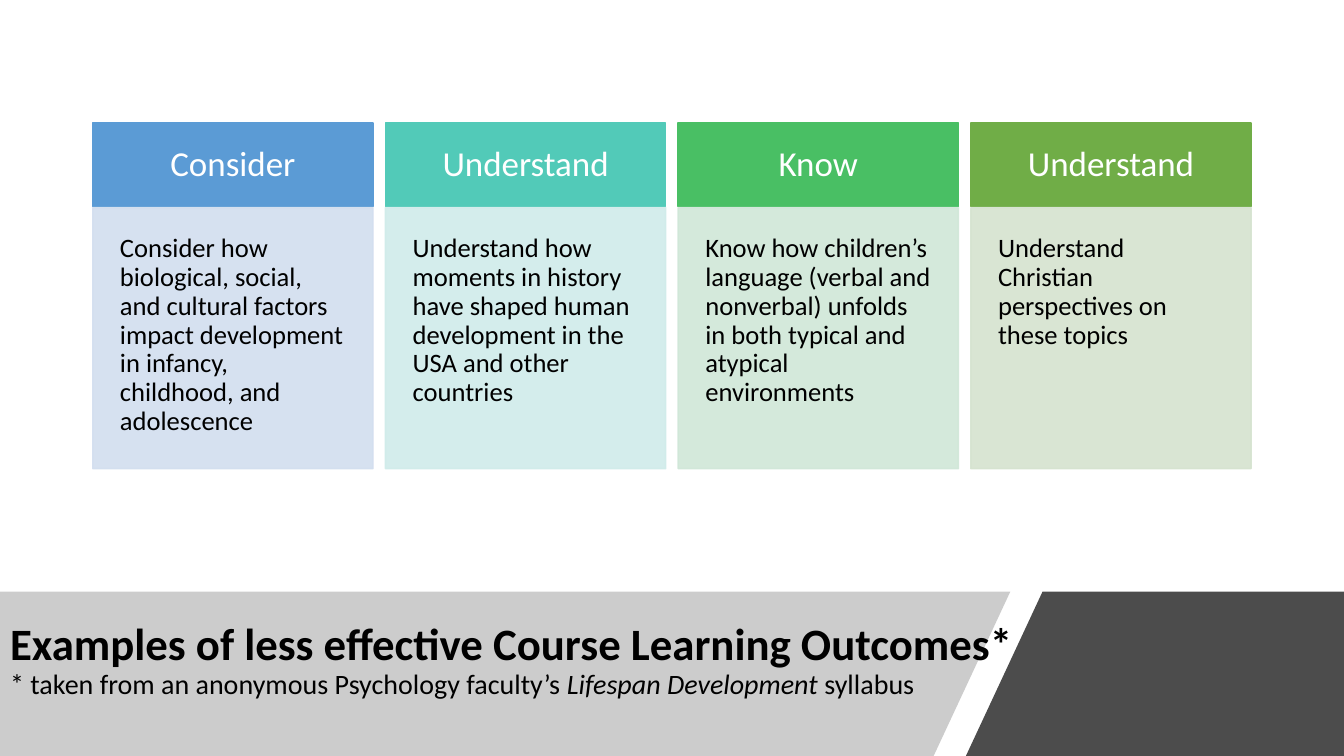
from dataclasses import dataclass

from pptx import Presentation
from pptx.dml.color import RGBColor
from pptx.enum.shapes import MSO_SHAPE as Shape
from pptx.enum.text import MSO_ANCHOR as Anchor, MSO_AUTO_SIZE as AutoSize, PP_ALIGN as Align
from pptx.oxml.ns import qn
from pptx.oxml.xmlchemy import OxmlElement
from pptx.util import Inches, Pt

FONT = "Calibri"
COLORS = {"black": "000000", "white": "FFFFFF", "gray": "808080"}
SLIDE_WIDTH, SLIDE_HEIGHT = 13.33, 7.5
BAND_TOP = 5.87
COLUMN_LEFT, COLUMN_STEP, COLUMN_WIDTH = 0.92, 2.903, 2.78


@dataclass(frozen=True)
class Outcome:
    verb: str
    statement: str
    header_fill: str
    body_fill: str


@dataclass(frozen=True)
class BoxStyle:
    top: float
    height: float
    inset: float
    size: int
    color: str
    align: Align
    anchor: Anchor
    opacity: int


@dataclass(frozen=True)
class Band:
    points: tuple[tuple[float, float], ...]
    color: str
    opacity: int


@dataclass(frozen=True)
class TitleRun:
    text: str
    size: int = 20
    bold: bool = False
    italic: bool = False


HEADER = BoxStyle(1.22, 0.83, 0.22, 25, COLORS["white"], Align.CENTER, Anchor.MIDDLE, 100)
BODY = BoxStyle(2.06, 2.59, 0.27, 19, COLORS["black"], Align.LEFT, Anchor.TOP, 90)

OUTCOMES = (
    Outcome("Consider",
            "Consider how biological, social, and cultural factors impact development "
            "in infancy, childhood, and adolescence", "5B9BD5", "D2DEEF"),
    Outcome("Understand",
            "Understand how moments in history have shaped human development in the USA "
            "and other countries", "52CAB8", "D0ECEA"),
    Outcome("Know",
            "Know how children’s language (verbal and nonverbal) unfolds in both typical "
            "and atypical environments", "49BF64", "D0E7D8"),
    Outcome("Understand",
            "Understand Christian perspectives on these topics", "70AD47", "D5E3CF"),
)

TITLE_BAND = Band(((0, BAND_TOP), (10.02, BAND_TOP), (9.26, SLIDE_HEIGHT), (0, SLIDE_HEIGHT)),
                  COLORS["gray"], 40)
DARK_BAND = Band(((10.34, BAND_TOP), (SLIDE_WIDTH, BAND_TOP), (SLIDE_WIDTH, SLIDE_HEIGHT),
                  (9.58, SLIDE_HEIGHT)), COLORS["black"], 70)

TITLE_LINES = (
    (TitleRun("Examples of less effective Course Learning Outcomes*", 32, bold=True),),
    (TitleRun("* taken from an anonymous Psychology faculty’s "),
     TitleRun("Lifespan Development ", italic=True),
     TitleRun("syllabus")),
)


def set_all(target, **values) -> None:
    for name, value in values.items():
        setattr(target, name, value)


def set_opacity(shape, percent: int) -> None:
    """Apply one opacity to every fill and line colour of the shape."""
    if percent == 100:
        return
    for color in shape.element.spPr.iter(qn("a:srgbClr")):
        alpha = OxmlElement("a:alpha")
        alpha.set("val", str(percent * 1000))
        color.append(alpha)


def style_run(span, size: int, color: str, **font_values) -> None:
    set_all(span.font, name=FONT, size=Pt(size), **font_values)
    span.font.color.rgb = RGBColor.from_string(color)


def add_band(page, band: Band):
    start, *others = [(Inches(x), Inches(y)) for x, y in band.points]
    builder = page.shapes.build_freeform(*start)
    builder.add_line_segments(others, close=True)
    shape = builder.convert_to_shape()
    shape.shadow.inherit = False
    shape.fill.solid()
    shape.fill.fore_color.rgb = RGBColor.from_string(band.color)
    shape.line.fill.background()
    set_opacity(shape, band.opacity)
    return shape


def fill_title(title) -> None:
    set_all(title, left=Inches(0), top=Inches(BAND_TOP),
            width=Inches(10.5), height=Inches(1.38))
    frame = title.text_frame
    set_all(frame, word_wrap=True, auto_size=AutoSize.NONE, vertical_anchor=Anchor.MIDDLE)
    para = frame.paragraphs[0]
    set_all(para, alignment=Align.LEFT, line_spacing=0.9)
    for index, line in enumerate(TITLE_LINES):
        if index:
            para.add_line_break()
        for part in line:
            span = para.add_run()
            span.text = part.text
            style_run(span, part.size, COLORS["black"], bold=part.bold, italic=part.italic)


def add_box(page, left: float, text: str, fill: str, style: BoxStyle) -> None:
    box = page.shapes.add_shape(Shape.RECTANGLE, Inches(left), Inches(style.top),
                                Inches(COLUMN_WIDTH), Inches(style.height))
    box.shadow.inherit = False
    for paint in (box.fill, box.line.fill):
        paint.solid()
        paint.fore_color.rgb = RGBColor.from_string(fill)
    box.line.width = Pt(1)
    set_opacity(box, style.opacity)

    frame = box.text_frame
    inset = Inches(style.inset)
    set_all(frame, word_wrap=True, vertical_anchor=style.anchor, margin_left=inset,
            margin_top=inset, margin_right=inset, margin_bottom=inset)
    para = frame.paragraphs[0]
    set_all(para, alignment=style.align, line_spacing=0.9)
    span = para.add_run()
    span.text = text
    style_run(span, style.size, style.color)


def main() -> None:
    deck = Presentation()
    set_all(deck, slide_width=Inches(SLIDE_WIDTH), slide_height=Inches(SLIDE_HEIGHT))
    page = deck.slides.add_slide(deck.slide_layouts.get_by_name("Title Only"))

    title = page.shapes.title
    fill_title(title)
    title_band = add_band(page, TITLE_BAND)
    title.element.addprevious(title_band.element)  # the title sits in front of its band
    add_band(page, DARK_BAND)

    for index, outcome in enumerate(OUTCOMES):
        left = COLUMN_LEFT + index * COLUMN_STEP
        add_box(page, left, outcome.verb, outcome.header_fill, HEADER)
        add_box(page, left, outcome.statement, outcome.body_fill, BODY)

    deck.save("out.pptx")


if __name__ == "__main__":
    main()
